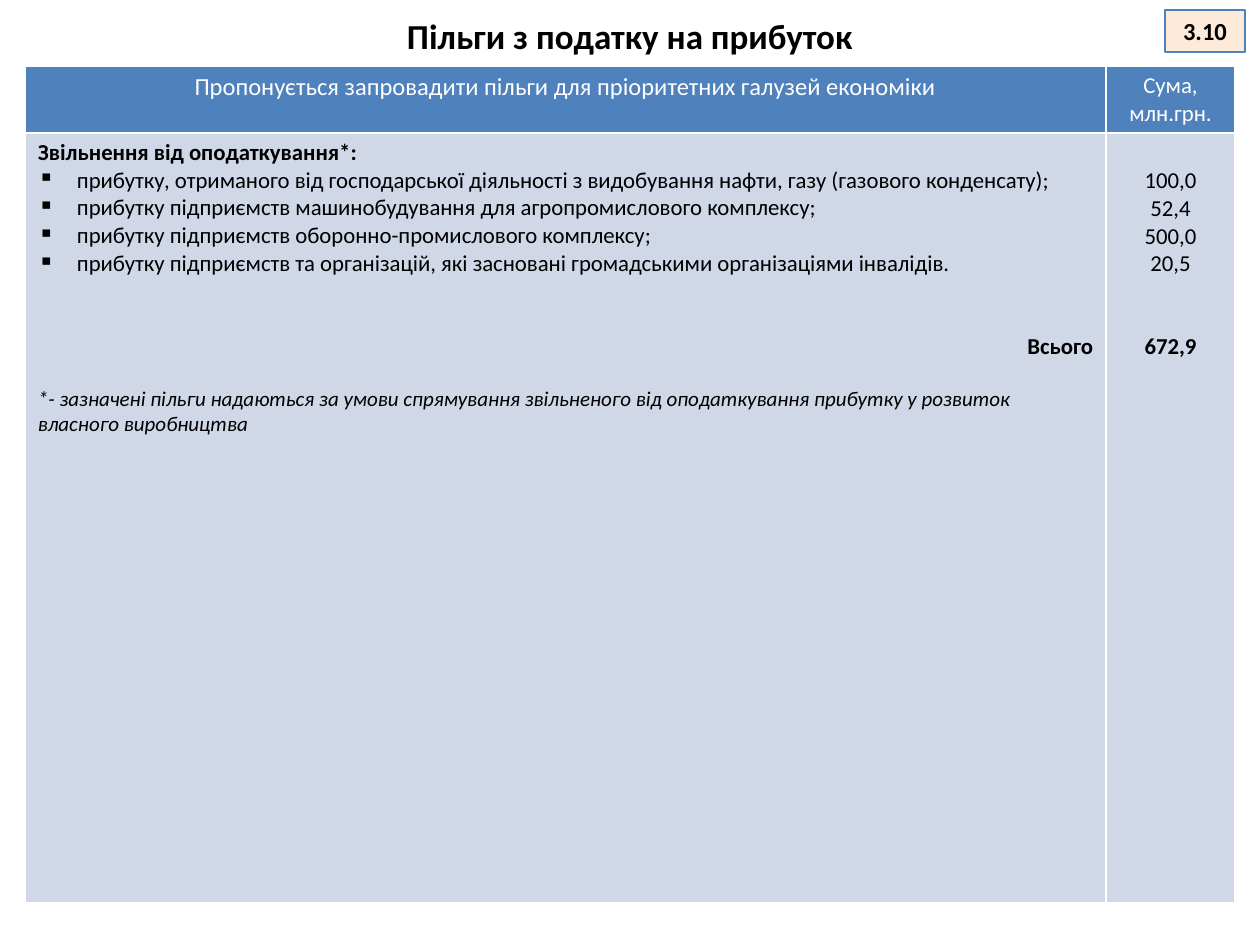
from dataclasses import dataclass

from lxml.etree import SubElement
from pptx import Presentation
from pptx.dml.color import RGBColor
from pptx.enum.shapes import MSO_SHAPE as Shape
from pptx.enum.text import MSO_ANCHOR as Anchor, PP_ALIGN as Align
from pptx.oxml.ns import qn
from pptx.util import Emu, Pt

SCALE = 914400 / 126
FONT = "Calibri"
BLACK, WHITE, BLUE, PALE, PEACH = "000000", "FFFFFF", "4F81BD", "D0D8E8", "FDEADA"
MARGIN_X, MARGIN_Y, LINE, INDENT = 13, 6, 28, 39


@dataclass
class Para:
    """One paragraph with a single run."""
    text: str
    size: int = 13
    align: Align = Align.CENTER
    bold: bool = False
    italic: bool = False
    color: str = BLACK
    bullet: bool = False
    before: float = 0


@dataclass
class CellStyle:
    """Fill and top margin of a table cell."""
    fill: str
    top: int = MARGIN_Y


RELIEFS = [
    ("прибутку, отриманого від господарської діяльності з видобування нафти, газу (газового конденсату);", "100,0"),
    ("прибутку підприємств машинобудування для агропромислового комплексу;", "52,4"),
    ("прибутку підприємств оборонно-промислового комплексу;", "500,0"),
    ("прибутку підприємств та організацій, які засновані громадськими організаціями інвалідів.", "20,5"),
]
TOTAL_GAP, NOTE_GAP = 31.7, 14.65
NOTE = ("*- зазначені пільги надаються за умови спрямування звільненого від "
        "оподаткування прибутку у розвиток власного виробництва")


def px(length: int) -> Emu:
    """Turn pixels into EMU."""
    return Emu(round(length * SCALE))


def color_of(value: str) -> RGBColor:
    """Turn a hex string into a colour."""
    return RGBColor.from_string(value)


def write(frame, items: list[Para]) -> None:
    """Fill a text frame with paragraphs."""
    frame.word_wrap = True
    for index, item in enumerate(items):
        para = frame.add_paragraph() if index else frame.paragraphs[0]
        para.alignment = item.align
        if item.before:
            para.space_before = Pt(item.before)
        if item.bullet:
            props = para._p.get_or_add_pPr()
            props.set("marL", str(px(INDENT)))
            props.set("indent", str(-px(INDENT)))
            SubElement(props, qn("a:buChar"), char="▪")
        span = para.add_run()
        span.text = item.text
        font = span.font
        font.name, font.size = FONT, Pt(item.size)
        font.bold, font.italic = item.bold, item.italic
        font.color.rgb = color_of(item.color)


def outline(cell) -> None:
    """Draw white borders around a cell, ahead of its fill."""
    props = cell._tc.get_or_add_tcPr()
    for position, side in enumerate(("lnL", "lnR", "lnT", "lnB")):
        line = SubElement(props, qn(f"a:{side}"), w=str(Pt(1)))
        fill = SubElement(line, qn("a:solidFill"))
        SubElement(fill, qn("a:srgbClr"), val=WHITE)
        props.insert(position, line)


def add_title(page, text: str) -> None:
    """Add the page title."""
    box = page.shapes.add_textbox(px(63), px(6), px(1134), px(58))
    box.text_frame.vertical_anchor = Anchor.MIDDLE
    write(box.text_frame, [Para(text, 20, bold=True)])


def add_number(page, text: str) -> None:
    """Add the framed page number."""
    box = page.shapes.add_shape(Shape.RECTANGLE, px(1165), px(10), px(80), px(42))
    box.shadow.inherit = False
    box.fill.solid()
    box.fill.fore_color.rgb = color_of(PEACH)
    box.line.color.rgb = color_of(BLUE)
    box.line.width = Pt(0.75)
    box.text_frame.vertical_anchor = Anchor.MIDDLE
    write(box.text_frame, [Para(text, 14, bold=True)])


def add_reliefs(page) -> None:
    """Add the table of tax reliefs and amounts."""
    widths, heights = (1081, 129), (67, 770)
    header = [
        [Para("Пропонується запровадити пільги для пріоритетних галузей економіки", 14, color=WHITE)],
        [Para("Сума, млн.грн.", color=WHITE)],
    ]
    names = [Para(name, align=Align.JUSTIFY, bullet=True) for name, _ in RELIEFS]
    body = [
        [Para("Звільнення від оподаткування*:", align=Align.JUSTIFY, bold=True), *names,
         Para("Всього", align=Align.RIGHT, bold=True, before=TOTAL_GAP),
         Para(NOTE, 12, Align.LEFT, italic=True, before=NOTE_GAP)],
        [*(Para(amount) for _, amount in RELIEFS),
         Para("672,9", bold=True, before=TOTAL_GAP)],
    ]
    styles = [[CellStyle(BLUE)] * 2, [CellStyle(PALE), CellStyle(PALE, MARGIN_Y + LINE)]]
    table = page.shapes.add_table(2, 2, px(25), px(66), px(sum(widths)), px(sum(heights))).table
    for column, width in zip(table.columns, widths):
        column.width = px(width)
    for row, height, texts, row_styles in zip(table.rows, heights, (header, body), styles):
        row.height = px(height)
        for cell, items, style in zip(row.cells, texts, row_styles):
            cell.margin_left = cell.margin_right = px(MARGIN_X)
            cell.margin_top, cell.margin_bottom = px(style.top), px(MARGIN_Y)
            cell.fill.solid()
            cell.fill.fore_color.rgb = color_of(style.fill)
            outline(cell)
            write(cell.text_frame, items)


def main() -> None:
    """Build and save the deck."""
    deck = Presentation()
    deck.slide_width, deck.slide_height = px(1260), px(945)
    page = deck.slides.add_slide(deck.slide_layouts[6])
    add_title(page, "Пільги з податку на прибуток")
    add_reliefs(page)
    add_number(page, "3.10")
    deck.save("out.pptx")


if __name__ == "__main__":
    main()
